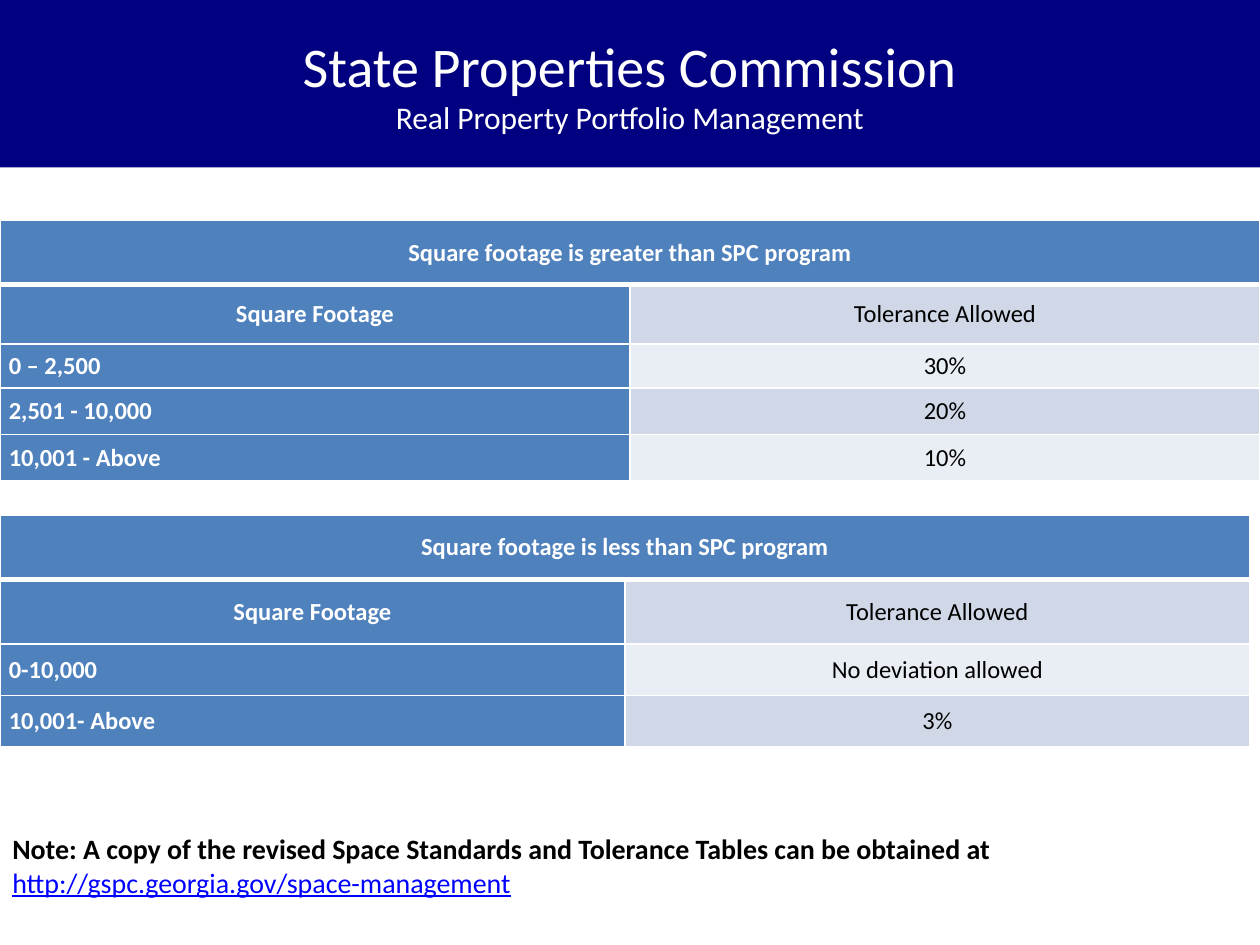
from lxml.etree import SubElement
from pptx import Presentation
from pptx.dml.color import RGBColor
from pptx.enum.shapes import MSO_SHAPE as Shape
from pptx.enum.text import MSO_ANCHOR as Anchor, MSO_AUTO_SIZE as AutoSize, PP_ALIGN as Align
from pptx.oxml.ns import qn
from pptx.util import Inches, Pt

COLORS = {"navy": "000080", "blue": "4F81BD", "band": "D0D8E8", "pale": "E9EDF4",
          "white": "FFFFFF", "black": "000000", "link": "0000FF"}


def add_span(para, text, size, color, bold=False, underline=None):
    span = para.add_run()
    span.text = text
    font = span.font
    font.name, font.size, font.bold, font.underline = "Calibri", Pt(size), bold, underline
    font.color.rgb = RGBColor.from_string(COLORS[color])


def add_borders(cell, bottom):
    """White cell borders, 1 pt except for the given bottom width."""
    props = cell._tc.get_or_add_tcPr()
    for side, width in (("L", 1), ("R", 1), ("T", 1), ("B", bottom)):
        line = SubElement(props, qn(f"a:ln{side}"), w=str(Pt(width)))
        fill = SubElement(line, qn("a:solidFill"))
        SubElement(fill, qn("a:srgbClr"), val=COLORS["white"])


deck = Presentation()
deck.slide_width, deck.slide_height = Inches(10), Inches(7.5)
page = deck.slides.add_slide(deck.slide_layouts[6])
full_width = deck.slide_width

# Title band
banner = page.shapes.add_shape(Shape.RECTANGLE, 0, 0, full_width, Inches(1.33))
banner.shadow.inherit = False
banner.fill.solid()
banner.fill.fore_color.rgb = RGBColor.from_string(COLORS["navy"])
banner.line.fill.background()
frame = banner.text_frame
frame.vertical_anchor = Anchor.MIDDLE
for para, text, size in (
    (frame.paragraphs[0], "State Properties Commission", 32),
    (frame.add_paragraph(), "Real Property Portfolio Management", 18),
):
    para.alignment = Align.CENTER
    add_span(para, text, size, "white")

# Tolerance tables: top, width, row heights, title, body rows
column_names = ("Square Footage", "Tolerance Allowed")
tolerances = (
    (1.75, 10, (0.51, 0.47, 0.35, 0.37, 0.37), "Square footage is greater than SPC program",
     (("0 – 2,500", "30%"), ("2,501 - 10,000", "20%"), ("10,001 - Above", "10%"))),
    (4.09, 9.92, (0.51, 0.51, 0.41, 0.41), "Square footage is less than SPC program",
     (("0-10,000", "No deviation allowed"), ("10,001- Above", "3%"))),
)
for top, width, heights, title, body in tolerances:
    rows = ((title, ""), column_names) + body
    table = page.shapes.add_table(len(rows), 2, 0, Inches(top), Inches(width),
                                  Inches(sum(heights))).table
    table.cell(0, 0).merge(table.cell(0, 1))
    for r, texts in enumerate(rows):
        table.rows[r].height = Inches(heights[r])
        for c, text in enumerate(texts):
            cell = table.cell(r, c)
            is_header = r == 0 or c == 0
            add_borders(cell, 3 if r == 0 else 1)
            cell.fill.solid()
            fill = "blue" if is_header else "band" if r % 2 else "pale"
            cell.fill.fore_color.rgb = RGBColor.from_string(COLORS[fill])
            cell.vertical_anchor = Anchor.MIDDLE
            cell.margin_left = cell.margin_right = Inches(0.07)
            cell.margin_top = cell.margin_bottom = 0
            if text:
                para = cell.text_frame.paragraphs[0]
                para.alignment = Align.LEFT if c == 0 and r > 1 else Align.CENTER
                add_span(para, text, 14, "white" if is_header else "black", is_header)

# Note
note = page.shapes.add_textbox(0, Inches(6.55), full_width, Inches(0.64)).text_frame
note.word_wrap = True
note.auto_size = AutoSize.SHAPE_TO_FIT_TEXT
para = note.paragraphs[0]
add_span(para, "Note: A copy of the revised Space Standards and Tolerance Tables "
               "can be obtained at ", 16, "black", bold=True)
add_span(para, "http://gspc.georgia.gov/space-management", 16, "link", underline=True)

deck.save("out.pptx")
